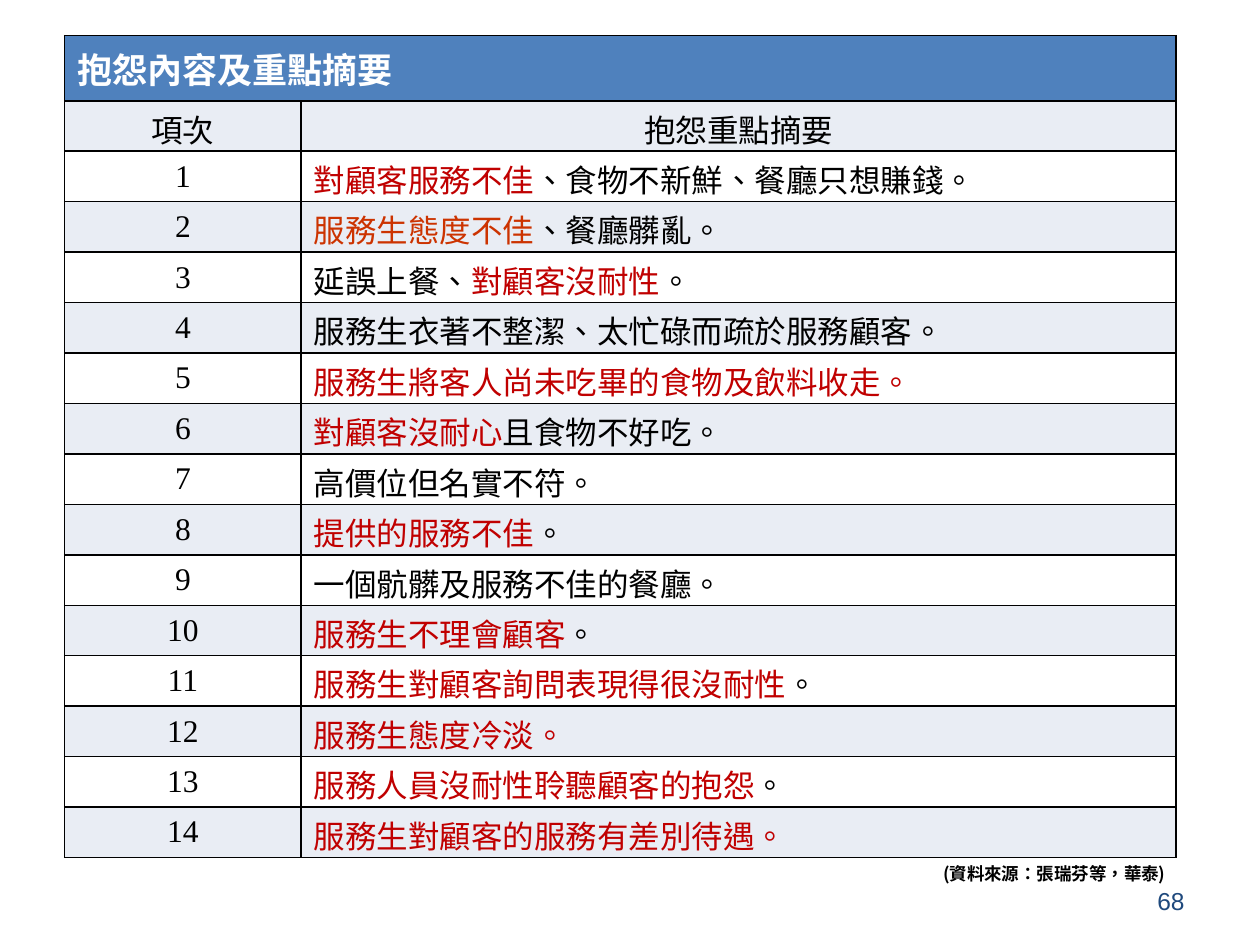
from dataclasses import dataclass
from typing import NamedTuple

from lxml import etree
from pptx import Presentation
from pptx import util as u
from pptx.dml.color import RGBColor
from pptx.enum import lang, text
from pptx.oxml import ns


@dataclass(frozen=True)
class Theme:
    ink: str = "000000"
    white: str = "FFFFFF"
    red: str = "C00000"
    orange: str = "CC3300"
    navy: str = "1F497D"
    header: str = "4F81BD"
    band: str = "E9EDF4"
    latin: str = "Times New Roman"
    asian: str = "Noto Sans CJK SC"
    number_font: str = "Arial"
    title_size: float = 20
    body_size: float = 18
    number_size: float = 14
    source_size: float = 10
    border: float = 1


class Span(NamedTuple):
    words: str
    color: str


class Style(NamedTuple):
    size: float
    font: str
    bold: bool = False
    align: text.PP_ALIGN = text.PP_ALIGN.LEFT


class Area(NamedTuple):
    left: float
    top: float
    width: float
    height: float


class Insets(NamedTuple):
    top: float
    bottom: float


THEME = Theme()
CENTER, RIGHT = text.PP_ALIGN.CENTER, text.PP_ALIGN.RIGHT
MIDDLE, TOP = text.MSO_ANCHOR.MIDDLE, text.MSO_ANCHOR.TOP
TITLE = Style(THEME.title_size, THEME.latin, bold=True)
BODY = Style(THEME.body_size, THEME.latin)
CENTERED = BODY._replace(align=CENTER)
EVEN = Insets(3.6, 3.6)
LOW = Insets(2.6, 0)  # lets a tall Chinese line fit its row

TABLE = Area(36.9, 20.4, 635.1, 469.5)
NUMBER_WIDTH = 135.2
TITLE_HEIGHT, ROW_HEIGHT = 37.2, 28.8


def ink(words: str) -> Span:
    return Span(words, THEME.ink)


def red(words: str) -> Span:
    return Span(words, THEME.red)


COMPLAINTS = [
    [red("對顧客服務不佳"), ink("、食物不新鮮、餐廳只想賺錢。")],
    [Span("服務生態度不佳", THEME.orange), ink("、餐廳髒亂。")],
    [ink("延誤上餐、"), red("對顧客沒耐性"), ink("。")],
    [ink("服務生衣著不整潔、太忙碌而疏於服務顧客。")],
    [red("服務生將客人尚未吃畢的食物及飲料收走。")],
    [red("對顧客沒耐心"), ink("且食物不好吃。")],
    [ink("高價位但名實不符。")],
    [red("提供的服務不佳"), ink("。")],
    [ink("一個骯髒及服務不佳的餐廳。")],
    [red("服務生不理會顧客"), ink("。")],
    [red("服務生對顧客詢問表現得很沒耐性"), ink("。")],
    [red("服務生態度冷淡。")],
    [red("服務人員沒耐性聆聽顧客的抱怨"), ink("。")],
    [red("服務生對顧客的服務有差別待遇。")],
]


def apply(target, values: dict) -> None:
    for name, value in values.items():
        setattr(target, name, value)


def write(frame, spans: list[Span], style: Style) -> None:
    para = frame.paragraphs[0]
    para.alignment = style.align
    for words, color in spans:
        span = para.add_run()
        span.text = words
        apply(span.font, {
            "name": style.font,
            "size": u.Pt(style.size),
            "bold": style.bold,
            "language_id": lang.MSO_LANGUAGE_ID.TRADITIONAL_CHINESE,
        })
        span.font.color.rgb = RGBColor.from_string(color)
        asian = etree.SubElement(span.font._element, ns.qn("a:ea"))
        asian.set("typeface", THEME.asian)


def add_borders(cell) -> None:
    props = cell._tc.get_or_add_tcPr()
    for side in ("lnL", "lnR", "lnT", "lnB"):
        line = etree.SubElement(props, ns.qn(f"a:{side}"), w=str(u.Pt(THEME.border)))
        fill = etree.SubElement(line, ns.qn("a:solidFill"))
        etree.SubElement(fill, ns.qn("a:srgbClr"), val=THEME.ink)


def paint_cell(cell, fill: str) -> None:
    add_borders(cell)
    cell.fill.solid()
    cell.fill.fore_color.rgb = RGBColor.from_string(fill)
    cell.vertical_anchor = MIDDLE


def fill_cell(cell, spans: list[Span], style: Style, insets: Insets) -> None:
    apply(cell, {"margin_top": u.Pt(insets.top), "margin_bottom": u.Pt(insets.bottom)})
    write(cell.text_frame, spans, style)


def add_complaint_table(page) -> None:
    count = len(COMPLAINTS) + 2
    table = page.shapes.add_table(count, 2, *map(u.Pt, TABLE)).table
    table.columns[0].width = u.Pt(NUMBER_WIDTH)
    table.columns[1].width = u.Pt(TABLE.width - NUMBER_WIDTH)
    for index, row in enumerate(table.rows):
        row.height = u.Pt(ROW_HEIGHT if index else TITLE_HEIGHT)
        fill = (THEME.band if index % 2 else THEME.white) if index else THEME.header
        for cell in row.cells:
            paint_cell(cell, fill)

    table.cell(0, 0).merge(table.cell(0, 1))
    fill_cell(table.cell(0, 0), [Span("抱怨內容及重點摘要", THEME.white)], TITLE, EVEN)
    for column, heading in enumerate(("項次", "抱怨重點摘要")):
        fill_cell(table.cell(1, column), [ink(heading)], CENTERED, LOW)
    for number, spans in enumerate(COMPLAINTS, start=1):
        fill_cell(table.cell(number + 1, 0), [ink(str(number))], CENTERED, EVEN)
        fill_cell(table.cell(number + 1, 1), spans, BODY, LOW)


def add_label(page, area: Area, span: Span, style: Style, anchor) -> None:
    box = page.shapes.add_textbox(*map(u.Pt, area))
    apply(box.text_frame, {"word_wrap": True, "vertical_anchor": anchor})
    write(box.text_frame, [span], style)


def main() -> None:
    deck = Presentation()
    apply(deck, {"slide_width": u.Pt(720), "slide_height": u.Pt(540)})
    page = deck.slides.add_slide(deck.slide_layouts.get_by_name("Blank"))
    add_label(page, Area(516, 500.4, 168, 28.8), Span("68", THEME.navy),
              Style(THEME.number_size, THEME.number_font, align=RIGHT), MIDDLE)
    add_complaint_table(page)
    add_label(page, Area(435, 489.6, 238, 19.4), ink("(資料來源：張瑞芬等，華泰)"),
              Style(THEME.source_size, THEME.asian, bold=True, align=RIGHT), TOP)
    deck.save("out.pptx")


if __name__ == "__main__":
    main()
